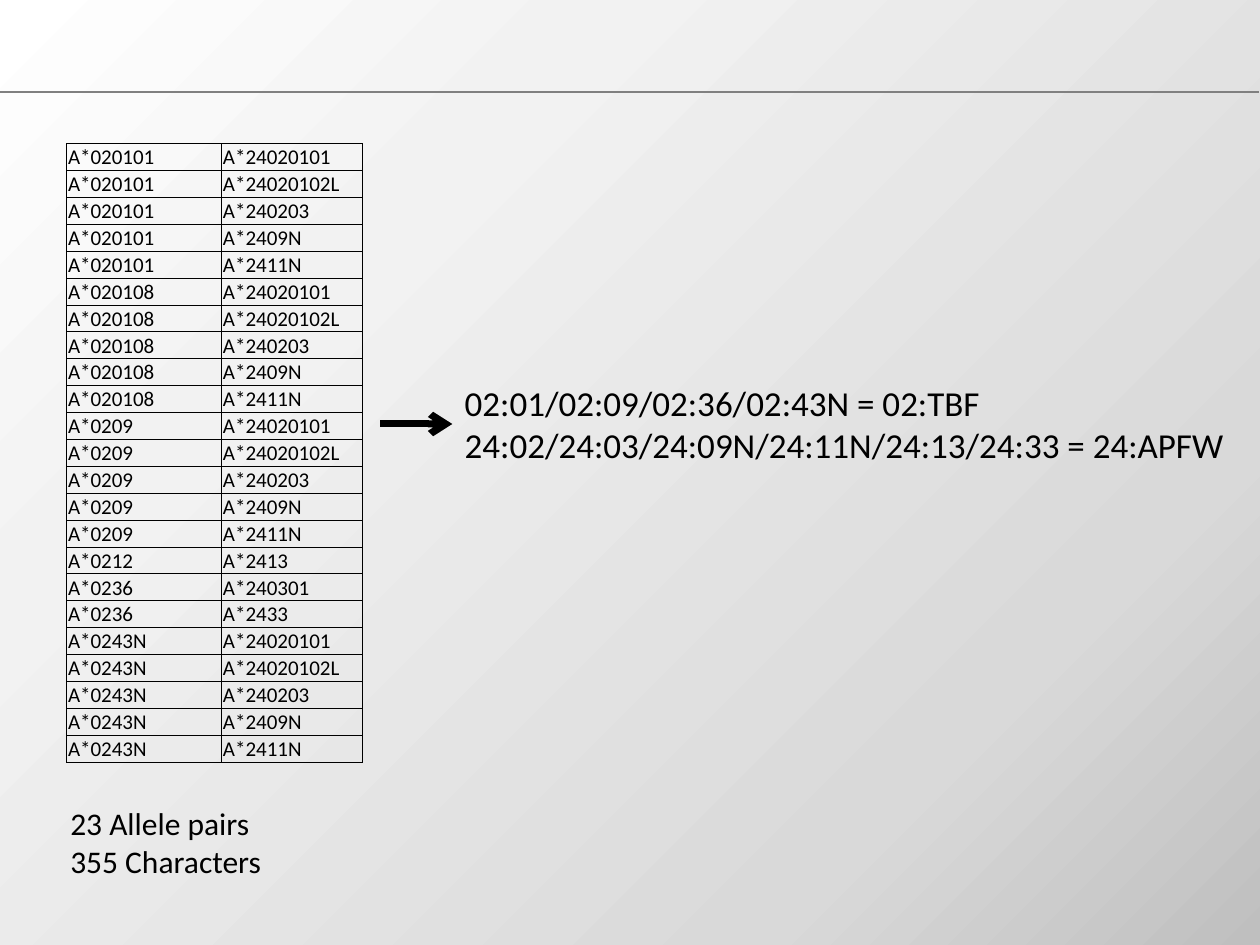
from dataclasses import dataclass
from itertools import product

import pptx
import pptx.dml.color
import pptx.enum.shapes
import pptx.enum.text
import pptx.oxml
import pptx.oxml.ns
import pptx.util

Inches = pptx.util.Inches
qn = pptx.oxml.ns.qn


@dataclass(frozen=True)
class Theme:
    font: str = "Calibri"
    ink: str = "000000"
    rule: str = "808080"
    background: tuple = ((0, "FFFFFF"), (28, "F2F2F2"), (77, "D9D9D9"), (100, "BFBFBF"))
    table_size: int = 12
    note_size: int = 18
    code_size: int = 20
    rule_width: float = 0.75
    border_width: float = 0.5
    arrow_width: float = 4


COMMON_ALLELES = ["A*24020101", "A*24020102L", "A*240203", "A*2409N", "A*2411N"]
ALLELE_PAIRS = [
    *product(["A*020101", "A*020108", "A*0209"], COMMON_ALLELES),
    ("A*0212", "A*2413"),
    ("A*0236", "A*240301"),
    ("A*0236", "A*2433"),
    *product(["A*0243N"], COMMON_ALLELES),
]


def rgb(color):
    return pptx.dml.color.RGBColor.from_string(color)


def write_text(text_frame, text, *, font, size, color):
    """Write one paragraph for each line of the text."""
    for index, line in enumerate(text.split("\n")):
        paragraph = text_frame.add_paragraph() if index else text_frame.paragraphs[0]
        run = paragraph.add_run()
        run.text = line
        run.font.name = font
        run.font.size = pptx.util.Pt(size)
        run.font.color.rgb = rgb(color)


def add_solid_fill(parent, color):
    fill = parent.makeelement(qn("a:solidFill"), {})
    fill.append(fill.makeelement(qn("a:srgbClr"), {"val": color}))
    parent.append(fill)


class SlideBuilder:
    def __init__(self, slide, theme):
        self.slide = slide
        self.theme = theme

    def background(self):
        """Fill the slide with a gradient spreading from the top left corner."""
        self.slide.background.fill.gradient()
        gradient = self.slide.element.find(".//" + qn("a:gradFill"))
        stops = "".join(
            f'<a:gs pos="{position * 1000}"><a:srgbClr val="{color}"/></a:gs>'
            for position, color in self.theme.background
        )
        gradient.getparent().replace(gradient, pptx.oxml.parse_xml(
            f'<a:gradFill {pptx.oxml.ns.nsdecls("a")} rotWithShape="1">'
            f'<a:gsLst>{stops}</a:gsLst><a:path path="circle">'
            '<a:fillToRect r="100000" b="100000"/></a:path></a:gradFill>'
        ))

    def line(self, start, end, *, color, width, arrow=False):
        connector = self.slide.shapes.add_connector(
            pptx.enum.shapes.MSO_CONNECTOR.STRAIGHT, *start, *end)
        connector.line.color.rgb = rgb(color)
        connector.line.width = pptx.util.Pt(width)
        properties = connector.element.spPr
        if arrow:
            outline = properties.find(qn("a:ln"))
            outline.append(outline.makeelement(qn("a:tailEnd"), {"type": "arrow"}))
        properties.append(properties.makeelement(qn("a:effectLst"), {}))
        return connector

    def text(self, text, left, top, width, height, *, size, wrap=True):
        box = self.slide.shapes.add_textbox(
            Inches(left), Inches(top), Inches(width), Inches(height))
        box.text_frame.word_wrap = wrap
        box.text_frame.auto_size = pptx.enum.text.MSO_AUTO_SIZE.SHAPE_TO_FIT_TEXT
        write_text(box.text_frame, text, font=self.theme.font, size=size,
                   color=self.theme.ink)
        return box

    def cell(self, cell, text):
        cell.margin_left = cell.margin_right = cell.margin_top = Inches(0.01)
        cell.margin_bottom = 0
        write_text(cell.text_frame, text, font=self.theme.font,
                   size=self.theme.table_size, color=self.theme.ink)
        properties = cell._tc.get_or_add_tcPr()
        width = str(pptx.util.Pt(self.theme.border_width))
        for side in ("a:lnL", "a:lnR", "a:lnT", "a:lnB"):
            border = properties.makeelement(qn(side), {"w": width})
            add_solid_fill(border, self.theme.ink)
            properties.append(border)
        cell.fill.background()

    def table(self, rows, left, top, column_widths, row_height, height):
        shape = self.slide.shapes.add_table(
            len(rows), len(column_widths), Inches(left), Inches(top),
            Inches(sum(column_widths)), Inches(height))
        table = shape.table
        table.first_row = table.horz_banding = False
        for column, width in zip(table.columns, column_widths):
            column.width = Inches(width)
        for row, texts in zip(table.rows, rows):
            row.height = Inches(row_height)
            for cell, text in zip(row.cells, texts):
                self.cell(cell, text)
        shape.height = Inches(height)


def main():
    presentation = pptx.Presentation()
    presentation.slide_width = Inches(10)
    presentation.slide_height = Inches(7.5)
    theme = Theme()
    builder = SlideBuilder(
        presentation.slides.add_slide(presentation.slide_layouts[6]), theme)

    builder.background()
    builder.line((Inches(-0.01), Inches(0.73)), (Inches(9.99), Inches(0.73)),
                 color=theme.rule, width=theme.rule_width)
    builder.table(ALLELE_PAIRS, 0.53, 1.14, (1.23, 1.12), 0.18, 4.84)
    builder.text("23 Allele pairs\n355 Characters", 0.46, 6.33, 1.73, 0.71,
                 size=theme.note_size, wrap=False)
    codes = builder.text(
        "02:01/02:09/02:36/02:43N = 02:TBF\n"
        "24:02/24:03/24:09N/24:11N/24:13/24:33 = 24:APFW",
        3.59, 2.98, 6.23, 0.77, size=theme.code_size)
    middle = codes.top + codes.height // 2
    arrow = builder.line((Inches(3.02), middle), (codes.left, middle),
                         color=theme.ink, width=theme.arrow_width, arrow=True)
    arrow.end_connect(codes, 1)

    presentation.save("out.pptx")


if __name__ == "__main__":
    main()
